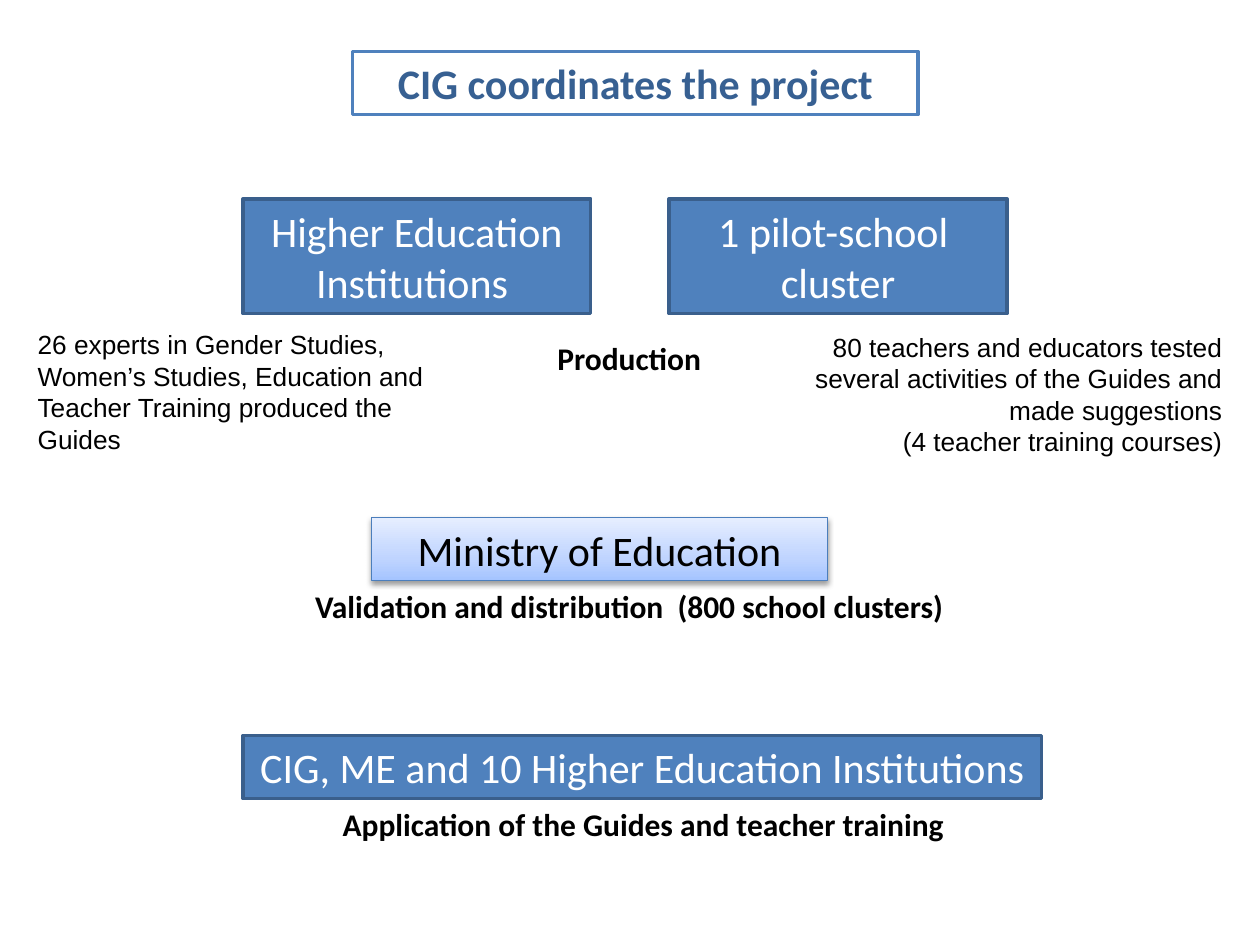
from copy import deepcopy

from lxml import etree
from pptx import Presentation
from pptx.dml.color import RGBColor
from pptx.enum.shapes import MSO_SHAPE
from pptx.enum.text import MSO_ANCHOR, MSO_AUTO_SIZE, PP_ALIGN
from pptx.oxml.ns import qn
from pptx.util import Cm, Pt

RECT = MSO_SHAPE.RECTANGLE
MIDDLE = MSO_ANCHOR.MIDDLE
GROW = MSO_AUTO_SIZE.SHAPE_TO_FIT_TEXT
LEFT, CENTER, RIGHT = PP_ALIGN.LEFT, PP_ALIGN.CENTER, PP_ALIGN.RIGHT

# Text formats
WHITE = dict(name="Calibri", size=24, color="FFFFFF", bold=False)
BLACK = {**WHITE, "color": "000000"}
TITLE = {**WHITE, "color": "376092", "bold": True}
STAGE = {**BLACK, "size": 18, "bold": True}
DETAIL = {**BLACK, "name": "Arial", "size": 15}

# Box styles: fill (a list means gradient stops), line colour, line width, font
SOLID = ("4F81BD", "3A5F8C", 2, WHITE)
OUTLINE = ("FFFFFF", "4F81BD", 2, TITLE)
GRADIENT = ([(0, "A4C4FF"), (0.35, "BFD4FF"), (1, "E6EEFF")], "4B7EBC", 0.75, BLACK)

# Left, top, width and height in cm, then paragraphs and style
BOXES = [
    (4.9, 4.01, 7.01, 2.31, ["Higher Education Institutions "], SOLID),
    (13.49, 4.01, 6.81, 2.31, ["1 pilot-school ", "cluster"], SOLID),
    (7.49, 10.44, 9.19, 1.27, ["Ministry of Education"], GRADIENT),
    (4.9, 14.83, 16.1, 1.27, ["CIG, ME and 10 Higher Education Institutions"], SOLID),
    (7.11, 1.04, 11.4, 1.27, ["CIG coordinates the project"], OUTLINE),
]
LABELS = [
    (0.51, 6.5, 8.41, 2.82,
     ["26 experts in Gender Studies, Women’s Studies, Education and "
      "Teacher Training produced the Guides"], DETAIL, LEFT),
    (15.29, 6.55, 9.6, 2.82,
     ["80 teachers and educators tested several activities of the Guides "
      "and made suggestions", "(4 teacher training courses)"], DETAIL, RIGHT),
    (10.69, 6.71, 3.99, 1.02, ["Production"], STAGE, CENTER),
    (5.69, 11.71, 14, 1.02,
     ["Validation and distribution  (800 school clusters)"], STAGE, CENTER),
    (4.6, 16.1, 16.89, 1.02,
     ["Application of the Guides and teacher training "], STAGE, CENTER),
]


def rgb(value):
    return RGBColor.from_string(value)


def write(sp, paragraphs, font, align):
    tf = sp.text_frame
    tf.word_wrap = True
    tf.auto_size = GROW
    for i, text in enumerate(paragraphs):
        p = tf.add_paragraph() if i else tf.paragraphs[0]
        p.alignment = align
        r = p.add_run()
        r.text = text
        values = {"name": font["name"], "size": Pt(font["size"]), "bold": font["bold"]}
        for key, value in values.items():
            setattr(r.font, key, value)
        r.font.color.rgb = rgb(font["color"])


def fill_gradient(sp, stops):
    sp.fill.gradient()
    sp.fill.gradient_angle = 90
    gs_list = sp.fill._fill._gradFill.find(qn("a:gsLst"))
    while len(gs_list) < len(stops):
        gs_list.append(deepcopy(gs_list[0]))
    for stop, (position, color) in zip(sp.fill.gradient_stops, stops):
        stop.position = position
        stop.color.rgb = rgb(color)


def add_shadow(sp):
    effects = sp._element.spPr.find(qn("a:effectLst"))
    shadow = etree.SubElement(effects, qn("a:outerShdw"), blurRad=str(Pt(3.1)),
                              dist=str(Pt(1.6)), dir="5400000", rotWithShape="0")
    color = etree.SubElement(shadow, qn("a:srgbClr"), val="000000")
    etree.SubElement(color, qn("a:alpha"), val="38000")


def add_box(s, x, y, w, h, paragraphs, style):
    fill, line, width, font = style
    sp = s.shapes.add_shape(RECT, Cm(x), Cm(y), Cm(w), Cm(h))
    sp.shadow.inherit = False
    sp.line.color.rgb = rgb(line)
    sp.line.width = Pt(width)
    if isinstance(fill, list):
        fill_gradient(sp, fill)
        add_shadow(sp)
    else:
        sp.fill.solid()
        sp.fill.fore_color.rgb = rgb(fill)
    sp.text_frame.vertical_anchor = MIDDLE
    write(sp, paragraphs, font, CENTER)


def main():
    prs = Presentation()
    prs.slide_width, prs.slide_height = Cm(25.4), Cm(19.05)
    s = prs.slides.add_slide(prs.slide_layouts[6])

    # Captions first, boxes in front
    for x, y, w, h, paragraphs, font, align in LABELS:
        sp = s.shapes.add_textbox(Cm(x), Cm(y), Cm(w), Cm(h))
        write(sp, paragraphs, font, align)
    for box in BOXES:
        add_box(s, *box)

    prs.save("out.pptx")


if __name__ == "__main__":
    main()
